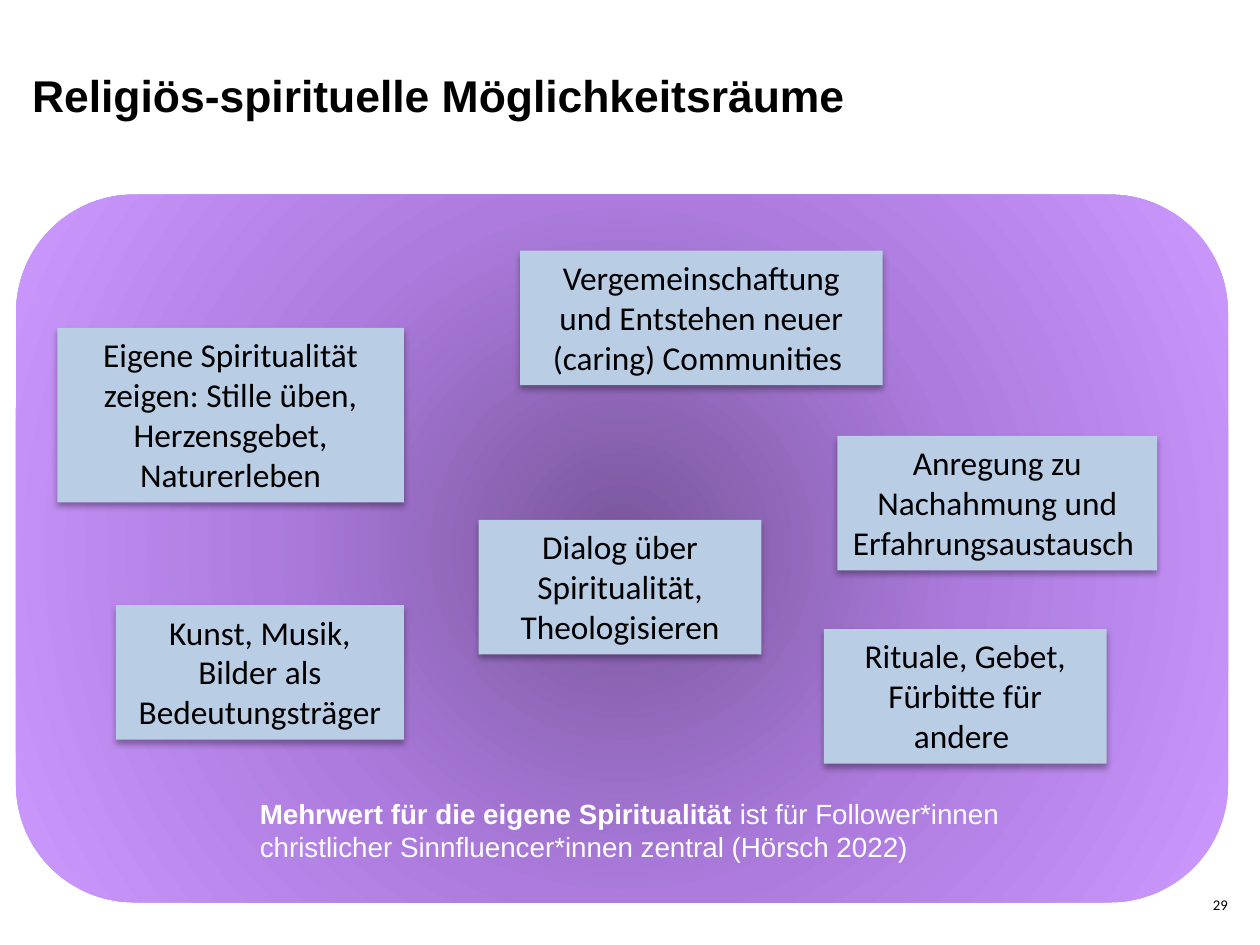
import pptx
import pptx.dml.color
import pptx.enum.shapes
import pptx.enum.text
import pptx.oxml
import pptx.oxml.ns
import pptx.util
from pptx.util import Inches

COLORS = {
    "text": "000000", "light_text": "FFFFFF", "card": "B9CDE5", "shadow": "000000",
    "center": "79569C", "middle": "AC7BDD", "edge": "CC99FF",
}
TITLE = "Religiös-spirituelle Möglichkeitsräume"
SLIDE_NUMBER = "29"
# Cards: left, top, width, height, text
CARDS = [
    (0.43, 2.46, 2.6, 1.31, "Eigene Spiritualität zeigen: Stille üben, Herzensgebet, Naturerleben"),
    (6.28, 3.27, 2.4, 1.01, "Anregung zu Nachahmung und Erfahrungsaustausch "),
    (6.18, 4.72, 2.12, 1.01, "Rituale, Gebet, Fürbitte für andere "),
    (0.87, 4.54, 2.16, 1.01, "Kunst, Musik, Bilder als Bedeutungsträger"),
    (3.59, 3.9, 2.12, 1.01, "Dialog über Spiritualität, Theologisieren"),
    (3.9, 1.88, 2.72, 1.01, "Vergemeinschaftung und Entstehen neuer (caring) Communities "),
]
# Closing statement: text, bold
STATEMENT = [
    ("Mehrwert für die eigene Spiritualität ", True),
    ("ist für Follower*innen christlicher Sinnfluencer*innen zentral (Hörsch 2022)", False),
]
GRADIENT_STOPS = [(0, "center"), (50, "middle"), (100, "edge")]
NAMESPACE = pptx.oxml.ns.nsdecls("a")
ALIGN = pptx.enum.text.PP_ALIGN
ANCHOR = pptx.enum.text.MSO_ANCHOR
SHAPE = pptx.enum.shapes.MSO_SHAPE


def add_shape(slide, kind, box):
    shape = slide.shapes.add_shape(kind, *map(Inches, box))
    shape.shadow.inherit = False
    shape.line.fill.background()
    return shape


def write(shape, runs, size, font, color="text", align=ALIGN.LEFT, anchor=ANCHOR.TOP, margin=None):
    frame = shape.text_frame
    frame.word_wrap = True
    frame.vertical_anchor = anchor
    if margin is not None:
        frame.margin_left = frame.margin_right = Inches(margin)
        frame.margin_top = frame.margin_bottom = Inches(margin)
    paragraph = frame.paragraphs[0]
    paragraph.alignment = align
    for text, bold in runs:
        run = paragraph.add_run()
        run.text = text
        run.font.size = pptx.util.Pt(size)
        run.font.name = font
        run.font.bold = bold
        run.font.color.rgb = pptx.dml.color.RGBColor.from_string(COLORS[color])
    return paragraph


def add_text(slide, box, runs, size, font, **options):
    return write(slide.shapes.add_textbox(*map(Inches, box)), runs, size, font, **options)


def set_radial_gradient(shape):
    stops = "".join(
        f'<a:gs pos="{position * 1000}"><a:srgbClr val="{COLORS[name]}"/></a:gs>'
        for position, name in GRADIENT_STOPS)
    gradient = pptx.oxml.parse_xml(
        f'<a:gradFill {NAMESPACE} rotWithShape="1"><a:gsLst>{stops}</a:gsLst>'
        '<a:path path="circle"><a:fillToRect l="50000" t="50000" r="50000" b="50000"/>'
        '</a:path></a:gradFill>')
    geometry = shape._element.spPr.find(pptx.oxml.ns.qn("a:prstGeom"))
    geometry.addnext(gradient)


def add_drop_shadow(shape):
    blur, distance = pptx.util.Pt(3.5), pptx.util.Pt(2.2)
    effects = shape._element.spPr.find(pptx.oxml.ns.qn("a:effectLst"))
    effects.append(pptx.oxml.parse_xml(
        f'<a:outerShdw {NAMESPACE} blurRad="{int(blur)}" dist="{int(distance)}" '
        f'dir="5400000" rotWithShape="0"><a:srgbClr val="{COLORS["shadow"]}">'
        '<a:alpha val="32000"/></a:srgbClr></a:outerShdw>'))


def main():
    presentation = pptx.Presentation()
    presentation.slide_width = Inches(9.45)
    presentation.slide_height = Inches(7.09)
    slide = presentation.slides.add_slide(presentation.slide_layouts[6])

    # Purple space behind the cards
    space = add_shape(slide, SHAPE.ROUNDED_RECTANGLE, (0.12, 1.46, 9.09, 5.31))
    set_radial_gradient(space)

    # Title and slide number
    title = add_text(slide, (0.24, 0.51, 6.58, 1.18), [(TITLE, True)], 24, "Arial", margin=0)
    title.line_spacing = pptx.util.Pt(29)
    add_text(slide, (6.77, 6.69, 2.44, 0.16), [(SLIDE_NUMBER, False)], 8, "Calibri",
             align=ALIGN.RIGHT, anchor=ANCHOR.BOTTOM, margin=0)

    # Cards
    for *box, text in CARDS:
        card = add_shape(slide, SHAPE.RECTANGLE, box)
        card.fill.solid()
        card.fill.fore_color.rgb = pptx.dml.color.RGBColor.from_string(COLORS["card"])
        add_drop_shadow(card)
        write(card, [(text, False)], 18, "Calibri", align=ALIGN.CENTER)

    # Closing statement
    add_text(slide, (1.85, 5.93, 6.02, 0.61), STATEMENT, 15, "Arial", color="light_text")

    presentation.save("out.pptx")


if __name__ == "__main__":
    main()
